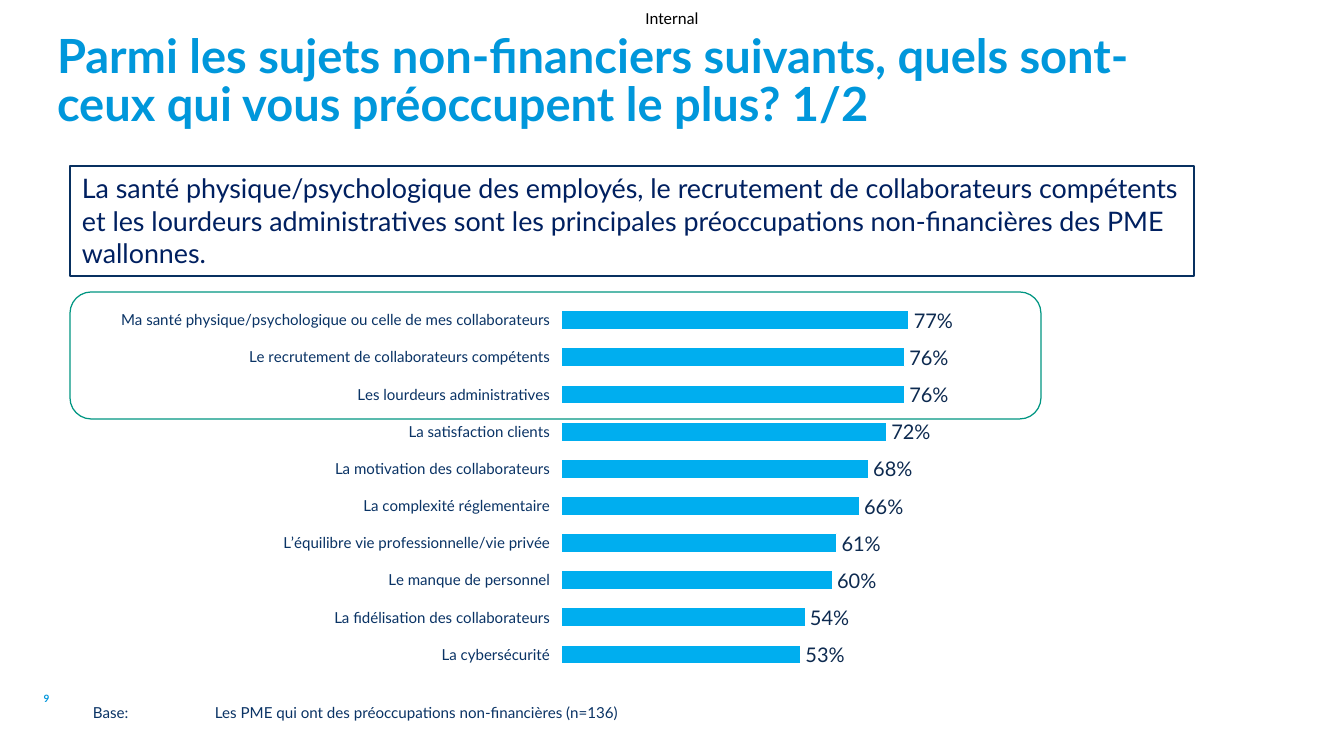
from dataclasses import dataclass
from typing import Optional

from lxml.etree import SubElement
from pptx import Presentation
from pptx.chart.data import CategoryChartData
from pptx.dml.color import RGBColor
from pptx.enum.chart import XL_CHART_TYPE as Kind
from pptx.enum.chart import XL_LABEL_POSITION as Pos
from pptx.enum.chart import XL_TICK_LABEL_POSITION as TickPos
from pptx.enum.chart import XL_TICK_MARK as Tick
from pptx.enum.shapes import MSO_SHAPE as Form
from pptx.enum.text import MSO_ANCHOR as Anchor
from pptx.enum.text import PP_ALIGN as Align
from pptx.oxml.ns import qn
from pptx.util import Emu, Pt


@dataclass(frozen=True)
class Theme:
    font: str = "Lato"
    mark_font: str = "Calibri"
    black: str = "000000"
    white: str = "FFFFFF"
    title: str = "0097DB"
    page: str = "0096DC"
    navy: str = "0A3365"
    claim: str = "002060"
    edge: str = "083060"
    green: str = "009682"
    bar: str = "00AEEF"
    value: str = "0D2A50"
    title_size: int = 28
    claim_size: int = 16
    value_size: int = 12
    mark_size: int = 10
    small_size: int = 9
    page_size: int = 6
    rule: float = 0.75


@dataclass(frozen=True)
class Box:
    left: int
    top: int
    width: int
    height: int


@dataclass(frozen=True)
class Label:
    text: str
    box: Box
    size: int
    color: str
    font: str = "Lato"
    bold: bool = False
    align: Align = Align.LEFT
    anchor: Anchor = Anchor.TOP
    inset: tuple[int, int] = (0, 0)
    spacing: Optional[float] = None
    tab: Optional[int] = None


@dataclass(frozen=True)
class Frame:
    form: Form
    box: Box
    color: str


THEME = Theme()


def px(count: int) -> Emu:
    return Emu(count * 7557)


def place(box: Box) -> tuple[Emu, Emu, Emu, Emu]:
    return px(box.left), px(box.top), px(box.width), px(box.height)


def rgb(code: str) -> RGBColor:
    return RGBColor.from_string(code)


def style(font, size: int, color: str, name: str = THEME.font, bold: bool = False) -> None:
    font.name, font.size, font.bold = name, Pt(size), bold
    font.color.rgb = rgb(color)


def draw_label(slide, label: Label) -> None:
    frame = slide.shapes.add_textbox(*place(label.box)).text_frame
    frame.word_wrap = True
    frame.vertical_anchor = label.anchor
    side, edge = label.inset
    frame.margin_left = frame.margin_right = px(side)
    frame.margin_top = frame.margin_bottom = px(edge)
    para = frame.paragraphs[0]
    para.alignment = label.align
    if label.spacing is not None:
        para.line_spacing = label.spacing
    if label.tab is not None:
        stops = SubElement(para._p.get_or_add_pPr(), qn("a:tabLst"))
        SubElement(stops, qn("a:tab"), pos=str(px(label.tab)), algn="l")
    run = para.add_run()
    run.text = label.text
    style(run.font, label.size, label.color, label.font, label.bold)


def draw_frame(slide, frame: Frame) -> None:
    shape = slide.shapes.add_shape(frame.form, *place(frame.box))
    shape.shadow.inherit = False
    shape.fill.background()
    shape.line.color.rgb = rgb(frame.color)
    shape.line.width = Pt(THEME.rule)


def set_plot(chart, **share: float) -> None:
    area = chart._chartSpace.chart.plotArea
    for old in area.findall(qn("c:layout")):
        area.remove(old)
    layout = SubElement(area, qn("c:layout"))
    area.insert(0, layout)
    manual = SubElement(layout, qn("c:manualLayout"))
    modes = {"layoutTarget": "inner", "xMode": "edge", "yMode": "edge"}
    for key, val in {**modes, **share}.items():
        SubElement(manual, qn(f"c:{key}"), val=str(val))


def draw_chart(slide, box: Box, scores: dict[str, int]) -> None:
    data = CategoryChartData()
    data.categories = list(scores)
    data.add_series("Series 1", list(scores.values()))
    chart = slide.shapes.add_chart(Kind.BAR_CLUSTERED, *place(box), data).chart
    chart.has_legend = chart.has_title = False
    style(chart.font, THEME.value_size, THEME.value)
    set_plot(chart, x=0.49, y=0.03, w=0.51, h=0.96)

    # Axes
    topics = chart.category_axis
    topics.reverse_order = True
    topics.major_tick_mark = topics.minor_tick_mark = Tick.NONE
    topics.tick_label_position = TickPos.LOW
    topics.format.line.fill.background()
    style(topics.tick_labels.font, THEME.small_size, THEME.navy)
    scale = chart.value_axis
    scale.minimum_scale, scale.maximum_scale = 0, 100
    scale.has_major_gridlines = False
    scale.visible = False

    # Bars and their values
    plot = chart.plots[0]
    plot.gap_width = 95
    plot.vary_by_categories = False
    bars = plot.series[0].format
    bars.fill.solid()
    bars.fill.fore_color.rgb = rgb(THEME.bar)
    bars.line.color.rgb = rgb(THEME.white)
    bars.line.width = Pt(THEME.rule)
    plot.has_data_labels = True
    marks = plot.data_labels
    marks.show_value = True
    marks.number_format, marks.number_format_is_linked = r"0\%", False
    marks.position = Pos.OUTSIDE_END
    style(marks.font, THEME.value_size, THEME.value)


CLAIM = Box(70, 166, 1124, 110)
SCORES = {
    "Ma santé physique/psychologique ou celle de mes collaborateurs": 77,
    "Le recrutement de collaborateurs compétents": 76,
    "Les lourdeurs administratives": 76,
    "La satisfaction clients": 72,
    "La motivation des collaborateurs": 68,
    "La complexité réglementaire": 66,
    "L’équilibre vie professionnelle/vie privée": 61,
    "Le manque de personnel": 60,
    "La fidélisation des collaborateurs": 54,
    "La cybersécurité": 53,
}
LABELS = [
    Label("Internal", Box(627, 0, 90, 35), THEME.mark_size, THEME.black,
          font=THEME.mark_font, align=Align.CENTER, anchor=Anchor.MIDDLE),
    Label("9", Box(0, 679, 93, 40), THEME.page_size, THEME.page, bold=True,
          align=Align.CENTER, anchor=Anchor.MIDDLE, inset=(12, 6)),
    Label("Parmi les sujets non-financiers suivants, quels sont-ceux qui vous "
          "préoccupent le plus? 1/2", Box(57, 35, 1153, 71), THEME.title_size,
          THEME.title, bold=True, spacing=0.85),
    Label("Base:\tLes PME qui ont des préoccupations non-financières (n=136)",
          Box(93, 708, 1096, 21), THEME.small_size, THEME.navy,
          spacing=Pt(8), tab=122),
    Label("La santé physique/psychologique des employés, le recrutement de "
          "collaborateurs compétents et les lourdeurs administratives sont les "
          "principales préoccupations non-financières des PME wallonnes.",
          CLAIM, THEME.claim_size, THEME.claim, inset=(12, 6)),
]
FRAMES = [
    Frame(Form.RECTANGLE, CLAIM, THEME.edge),
    Frame(Form.ROUNDED_RECTANGLE, Box(70, 292, 971, 127), THEME.green),
]


def main() -> None:
    deck = Presentation()
    deck.slide_width, deck.slide_height = px(1344), px(756)
    slide = deck.slides.add_slide(deck.slide_layouts[6])
    draw_chart(slide, Box(121, 290, 892, 387), SCORES)
    for frame in FRAMES:
        draw_frame(slide, frame)
    for label in LABELS:
        draw_label(slide, label)
    deck.save("out.pptx")


if __name__ == "__main__":
    main()
